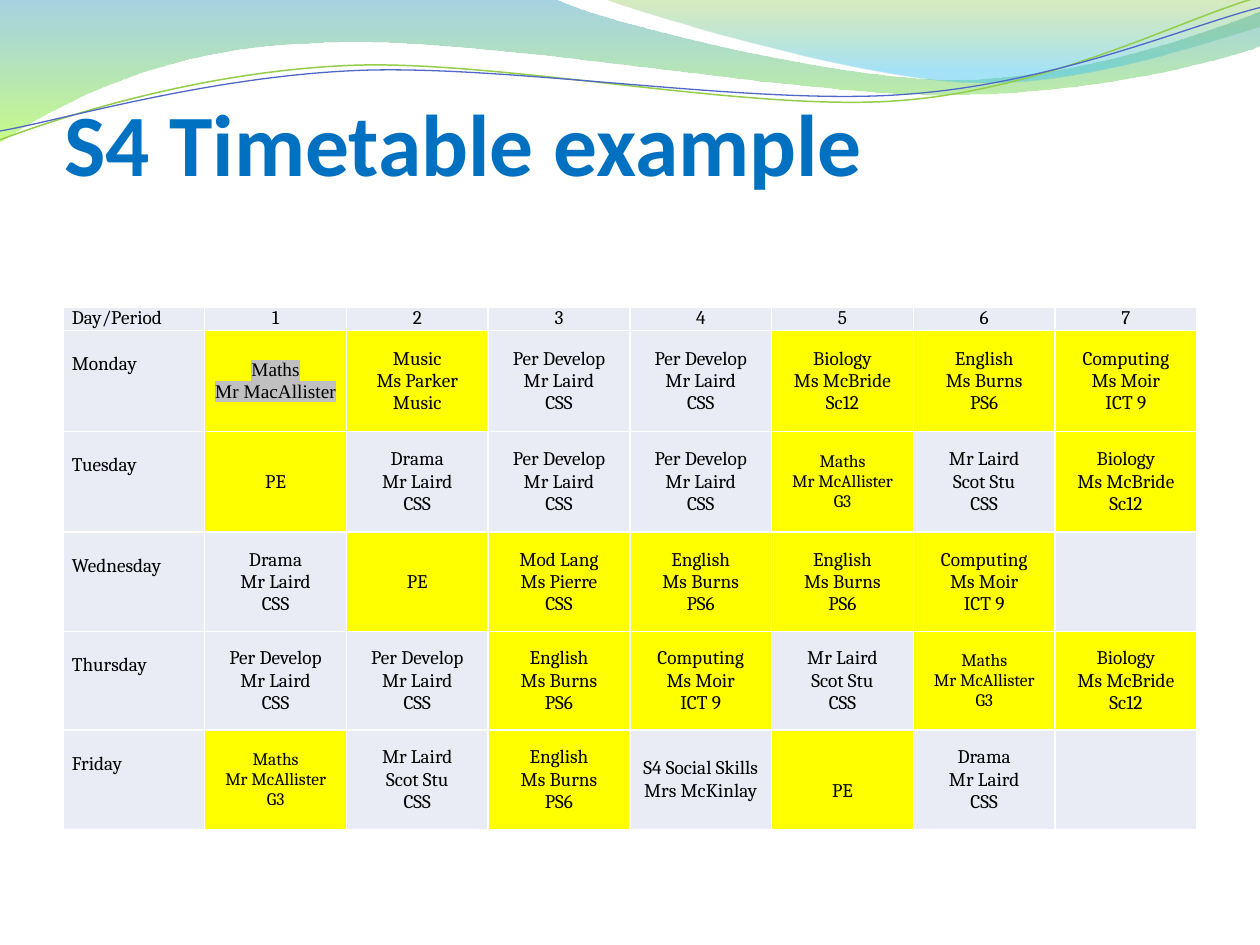
from lxml.etree import SubElement
from pptx import Presentation
from pptx.dml.color import RGBColor
from pptx.enum.text import MSO_ANCHOR, PP_ALIGN
from pptx.oxml.ns import qn
from pptx.util import Inches, Pt

WIDTH, HEIGHT = 10, 7.5
TITLE = "S4 Timetable example"
PALE, YELLOW = "E9EBF5", "FFFF00"
BODY_SIZE, SMALL_SIZE = 11, 10
ROW_HEIGHTS = [0.18, 0.8, 0.8, 0.79, 0.78, 0.79]
LINE_DROP = 0.18

LESSONS = {
    "maths_mac": (YELLOW, ["Maths", "Mr MacAllister"]),
    "maths": (YELLOW, ["Maths", "Mr McAllister", "G3"]),
    "music": (YELLOW, ["Music", "Ms Parker", "Music"]),
    "biology": (YELLOW, ["Biology", "Ms McBride", "Sc12"]),
    "english": (YELLOW, ["English", "Ms Burns", "PS6"]),
    "computing": (YELLOW, ["Computing", "Ms Moir", "ICT 9"]),
    "language": (YELLOW, ["Mod Lang", "Ms Pierre", "CSS"]),
    "pe": (YELLOW, ["PE"]),
    "pe_low": (YELLOW, ["PE"]),
    "develop": (PALE, ["Per Develop", "Mr Laird", "CSS"]),
    "drama": (PALE, ["Drama", "Mr Laird", "CSS"]),
    "scottish": (PALE, ["Mr Laird", "Scot Stu", "CSS"]),
    "social": (PALE, ["S4 Social Skills", "Mrs McKinlay"]),
    "free": (PALE, []),
}
HEADER = ["Day/Period", "1", "2", "3", "4", "5", "6", "7"]
WEEK = {
    "Monday": ["maths_mac", "music", "develop", "develop", "biology", "english", "computing"],
    "Tuesday": ["pe", "drama", "develop", "develop", "maths", "scottish", "biology"],
    "Wednesday": ["drama", "pe", "language", "english", "english", "computing", "free"],
    "Thursday": ["develop", "develop", "english", "computing", "scottish", "maths", "biology"],
    "Friday": ["maths", "scottish", "english", "social", "pe_low", "drama", "free"],
}

BANDS = [
    ([(0, 0), (4.4, -0.01), (4.76, 0.17, 6.64, 0.63, 7.58, 0.63),
      (8.53, 0.63, 9.58, 0.26, 10, 0.09), (10.01, 0.36),
      (9.83, 0.44, 8.7, 0.76, 7.46, 0.75), (6.22, 0.75, 3.82, 0.28, 2.57, 0.34),
      (1.29, 0.36, 0.46, 0.83, -0.01, 1.13)],
     [(0, "3B9CBF", 45), (1, "9CFA24", 55)]),
    ([(4.79, -0.01), (5.09, 0.11, 6.82, 0.62, 7.69, 0.65),
      (8.56, 0.69, 9.61, 0.32, 10, 0.21), (10, 0)],
     [(0, "7EBE2C", 30), (0.8, "39C1F1", 45)]),
]
WAVES = [
    ([(0, 1.11), (0.48, 0.93, 1.58, 0.57, 2.77, 0.52),
      (3.95, 0.47, 5.93, 0.89, 7.13, 0.8), (8.33, 0.71, 9.38, 0.15, 9.98, -0.02)],
     "93CE48", 0.85),
    ([(0, 1.04), (0.47, 0.96, 1.64, 0.61, 2.83, 0.56),
      (4.03, 0.51, 5.97, 0.84, 7.17, 0.75), (8.36, 0.67, 9.41, 0.21, 10, 0.06)],
     "4E67C8", 0.75),
]


def color(value):
    return RGBColor.from_string(value)


def draw_curve(slide, curve, close):
    steps = [[(Inches(x), Inches(y)) for x, y in zip(step[::2], step[1::2])]
             for step in curve]
    builder = slide.shapes.build_freeform(*steps[0][0])
    builder.add_line_segments([point for step in steps[1:] for point in step], close=close)
    outline = builder.convert_to_shape()
    outline.shadow.inherit = False
    segments = iter(list(outline._element.iter(qn("a:lnTo"))))
    for step in steps[1:]:
        parts = [next(segments) for _ in step]
        if len(parts) == 3:
            bend = parts[0].makeelement(qn("a:cubicBezTo"))
            parts[0].addprevious(bend)
            for part in parts:
                bend.append(part[0])
                part.getparent().remove(part)
    return outline


def draw_band(slide, curve, stops):
    band = draw_curve(slide, curve, True)
    band.fill.gradient()
    band.fill.gradient_angle = 270
    for stop, (position, value, _) in zip(band.fill.gradient_stops, stops):
        stop.position = position
        stop.color.rgb = color(value)
    for node, (_, _, opacity) in zip(band._element.spPr.iter(qn("a:srgbClr")), stops):
        SubElement(node, qn("a:alpha"), val=str(opacity * 1000))
    band.line.fill.background()


def draw_wave(slide, curve, value, width):
    wave = draw_curve(slide, curve, False)
    wave.fill.background()
    wave.line.color.rgb = color(value)
    wave.line.width = Pt(width)


def set_font(paragraph, name, size, value, bold=False):
    font = paragraph.font
    font.name, font.size, font.bold = name, Pt(size), bold
    font.color.rgb = color(value)


def add_highlight(run, value):
    highlight = SubElement(run._r.get_or_add_rPr(), qn("a:highlight"))
    SubElement(highlight, qn("a:srgbClr"), val=value)


def add_borders(cell):
    properties = cell._tc.get_or_add_tcPr()
    for i, side in enumerate(("lnL", "lnR", "lnT", "lnB")):
        border = SubElement(properties, qn(f"a:{side}"), w=str(Pt(1)))
        SubElement(SubElement(border, qn("a:solidFill")), qn("a:srgbClr"), val="FFFFFF")
        properties.insert(i, border)


def fill_cell(cell, lines, fill=PALE, align=PP_ALIGN.CENTER, anchor=MSO_ANCHOR.MIDDLE,
              drop=0, size=BODY_SIZE, font="Cambria", highlight=None):
    cell.fill.solid()
    cell.fill.fore_color.rgb = color(fill)
    add_borders(cell)
    cell.margin_left = cell.margin_right = Inches(0.07)
    cell.margin_top, cell.margin_bottom = Inches(drop), 0
    cell.vertical_anchor = anchor
    cell.text = "\n".join(lines)
    for paragraph in cell.text_frame.paragraphs:
        paragraph.alignment = align
        set_font(paragraph, font, size, "000000")
        if highlight:
            for run in paragraph.runs:
                add_highlight(run, highlight)


def add_title(slide):
    title = slide.shapes.add_textbox(Inches(0.51), Inches(0.29), Inches(9), Inches(1.25))
    frame = title.text_frame
    frame.word_wrap = True
    frame.vertical_anchor = MSO_ANCHOR.BOTTOM
    frame.margin_left = frame.margin_right = frame.margin_bottom = 0
    frame.text = TITLE
    set_font(frame.paragraphs[0], "Calibri", 50, "0070C0", bold=True)


def add_timetable(slide):
    table = slide.shapes.add_table(len(ROW_HEIGHTS), len(HEADER), Inches(0.5), Inches(2.44),
                                   Inches(9), Inches(sum(ROW_HEIGHTS))).table
    for row, height in zip(table.rows, ROW_HEIGHTS):
        row.height = Inches(height)
    styles = {
        "maths_mac": dict(font="Times New Roman", highlight="C0C0C0"),
        "maths": dict(size=SMALL_SIZE),
        "pe_low": dict(drop=LINE_DROP),
    }
    for column, label in enumerate(HEADER):
        align = PP_ALIGN.CENTER if column else PP_ALIGN.LEFT
        fill_cell(table.cell(0, column), [label], align=align, anchor=MSO_ANCHOR.TOP)
    for row, (day, lessons) in enumerate(WEEK.items(), 1):
        fill_cell(table.cell(row, 0), [day], align=PP_ALIGN.LEFT,
                  anchor=MSO_ANCHOR.TOP, drop=LINE_DROP)
        for column, lesson in enumerate(lessons, 1):
            fill, lines = LESSONS[lesson]
            fill_cell(table.cell(row, column), lines, fill, **styles.get(lesson, {}))


def main():
    deck = Presentation()
    deck.slide_width, deck.slide_height = Inches(WIDTH), Inches(HEIGHT)
    slide = deck.slides.add_slide(deck.slide_layouts[6])
    for band in BANDS:
        draw_band(slide, *band)
    for wave in WAVES:
        draw_wave(slide, *wave)
    add_title(slide)
    add_timetable(slide)
    deck.save("out.pptx")


if __name__ == "__main__":
    main()
